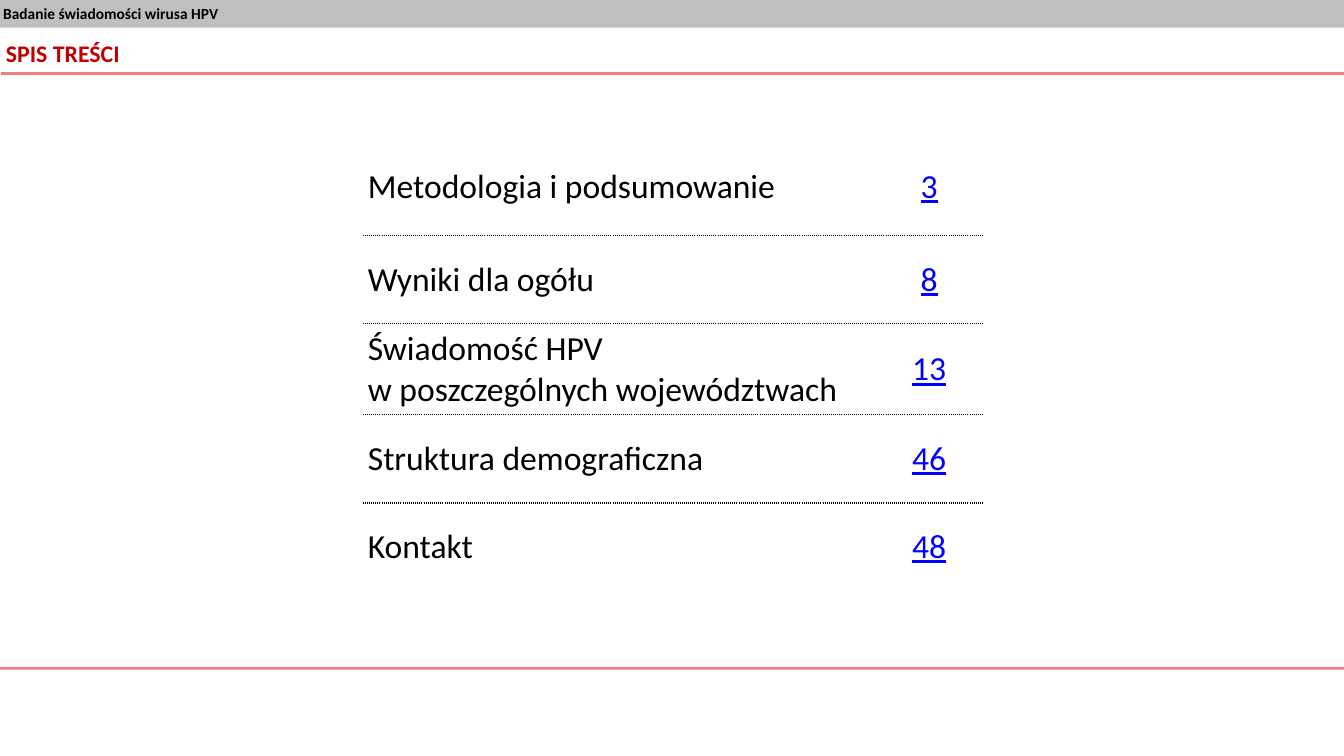
from lxml.etree import SubElement
from pptx import Presentation
from pptx.dml.color import RGBColor
from pptx.enum.shapes import MSO_CONNECTOR, MSO_SHAPE
from pptx.enum.text import MSO_ANCHOR, PP_ALIGN
from pptx.oxml.ns import qn
from pptx.util import Cm, Pt

HEADER = "Badanie świadomości wirusa HPV"
TITLE = "SPIS TREŚCI"
CONTENTS = [
    ("Metodologia i podsumowanie", "3"),
    ("Wyniki dla ogółu", "8"),
    ("Świadomość HPV\nw poszczególnych województwach", "13"),
    ("Struktura demograficzna", "46"),
    ("Kontakt", "48"),
]

BLACK = RGBColor(0, 0, 0)
GRAY = RGBColor(0x80, 0x80, 0x80)
RED = RGBColor(0xE0, 0, 0)
DARK_RED = RGBColor(0xC0, 0, 0)
BLUE = RGBColor(0, 0, 0xFF)

HEADER_FONT = {"name": "Calibri", "size": Pt(11), "bold": True}
TITLE_FONT = {"name": "Calibri", "size": Pt(17), "bold": True}
ENTRY_FONT = {"name": "Calibri", "size": Pt(24), "bold": False}
PAGE_FONT = {**ENTRY_FONT, "underline": True}

SLIDE_WIDTH, SLIDE_HEIGHT = Cm(33.87), Cm(19.05)
INSET = Cm(0.13)
RULES = [(0.02, 1.85), (0, 16.84)]
COLUMN_WIDTHS = [12.93, 2.69]
FIRST_ROW, OTHER_ROW = 2.46, 2.22


def write(frame, text, font, color, align=PP_ALIGN.LEFT):
    frame.word_wrap = True
    frame.text = text
    for para in frame.paragraphs:
        para.alignment = align
        for span in para.runs:
            for name, value in font.items():
                setattr(span.font, name, value)
            span.font.color.rgb = color


def set_insets(holder):
    holder.vertical_anchor = MSO_ANCHOR.MIDDLE
    for side in ("left", "right", "top", "bottom"):
        setattr(holder, f"margin_{side}", INSET)


def make_half_transparent(element):
    for color in element.iter(qn("a:srgbClr")):
        SubElement(color, qn("a:alpha"), val="50000")


def set_borders(cell, dotted_sides):
    """Give the cell dotted borders on the named sides and none elsewhere."""
    properties = cell._tc.get_or_add_tcPr()
    for side in "LRTB":
        if side in dotted_sides:
            line = SubElement(properties, qn(f"a:ln{side}"), w=str(Pt(1)))
            fill = SubElement(line, qn("a:solidFill"))
            SubElement(fill, qn("a:srgbClr"), val=str(BLACK))
            SubElement(line, qn("a:prstDash"), val="sysDot")
        else:
            line = SubElement(properties, qn(f"a:ln{side}"), w="0")
            SubElement(line, qn("a:noFill"))


deck = Presentation()
deck.slide_width, deck.slide_height = SLIDE_WIDTH, SLIDE_HEIGHT
page = deck.slides.add_slide(deck.slide_layouts[6])

bar = page.shapes.add_shape(MSO_SHAPE.RECTANGLE, Cm(-0.05), Cm(-0.03), Cm(33.93), Cm(0.73))
bar.shadow.inherit = False
bar.fill.solid()
bar.fill.fore_color.rgb = GRAY
make_half_transparent(bar.fill._xPr)
bar.line.fill.background()
set_insets(bar.text_frame)
write(bar.text_frame, HEADER, HEADER_FONT, BLACK)

for left, top in RULES:
    rule = page.shapes.add_connector(
        MSO_CONNECTOR.STRAIGHT, Cm(left + 34.01), Cm(top), Cm(left), Cm(top))
    rule.line.color.rgb = RED
    rule.line.width = Pt(2)
    make_half_transparent(rule.line._ln)
    SubElement(rule._element.spPr, qn("a:effectLst"))

title = page.shapes.add_textbox(Cm(0.02), Cm(0.75), SLIDE_WIDTH, Cm(1.17))
set_insets(title.text_frame)
write(title.text_frame, TITLE, TITLE_FONT, DARK_RED)

row_heights = [FIRST_ROW] + [OTHER_ROW] * (len(CONTENTS) - 1)
table = page.shapes.add_table(
    len(CONTENTS), len(COLUMN_WIDTHS), Cm(9.14), Cm(3.48),
    Cm(sum(COLUMN_WIDTHS)), Cm(sum(row_heights))).table
table.first_row = table.horz_banding = False
for column, width in zip(table.columns, COLUMN_WIDTHS):
    column.width = Cm(width)

last = len(CONTENTS) - 1
for index, (entry, number) in enumerate(CONTENTS):
    table.rows[index].height = Cm(row_heights[index])
    dotted_sides = ("T" if index > 0 else "") + ("B" if index < last else "")
    entry_cell, number_cell = table.rows[index].cells
    write(entry_cell.text_frame, entry, ENTRY_FONT, BLACK)
    write(number_cell.text_frame, number, PAGE_FONT, BLUE, PP_ALIGN.CENTER)
    for cell in (entry_cell, number_cell):
        set_insets(cell)
        set_borders(cell, dotted_sides)
        cell.fill.background()

deck.save("out.pptx")
